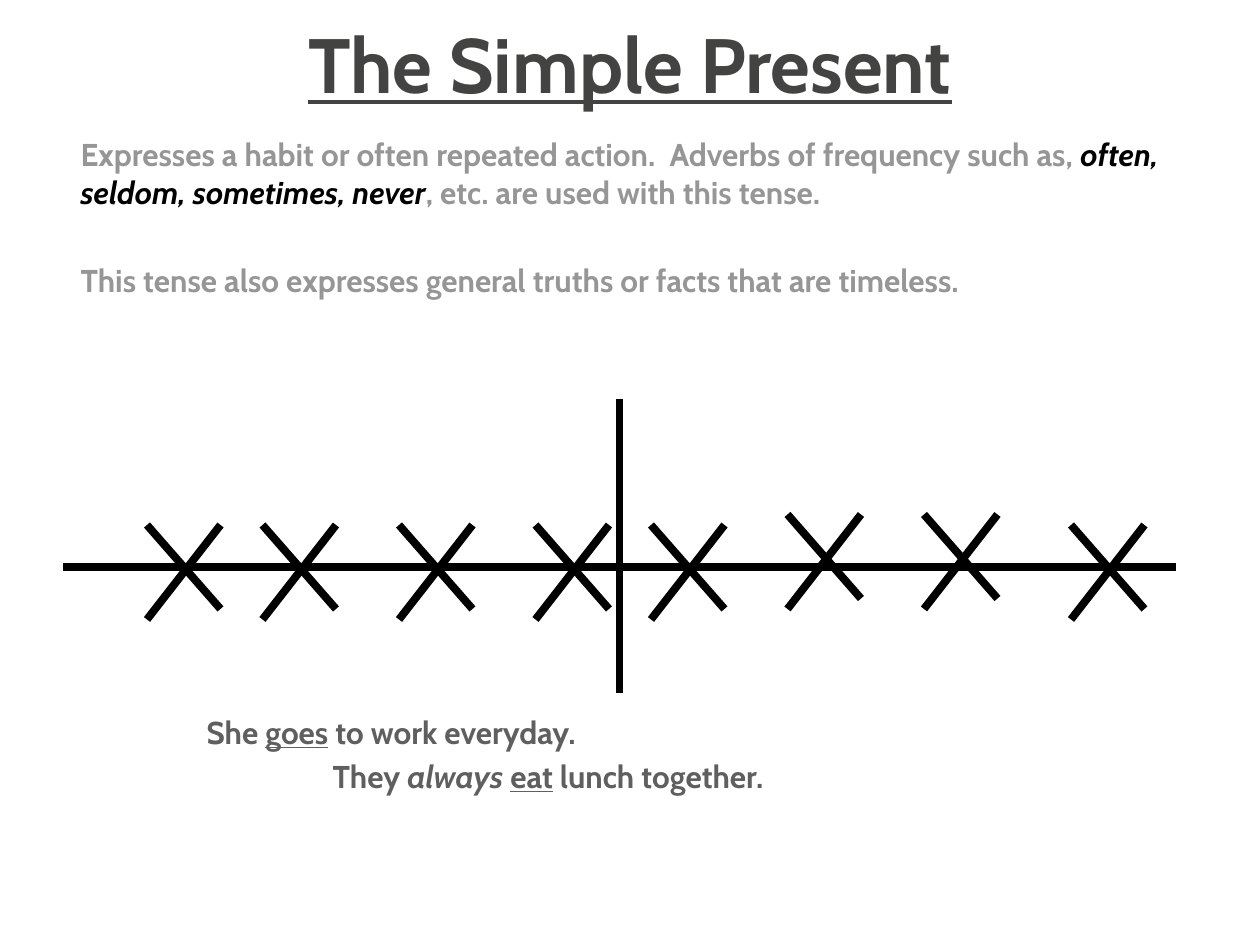
from pptx import Presentation
from pptx import util as u
from pptx.dml.color import RGBColor
from pptx.enum import shapes, text
from lxml import etree

PX = 9525  # EMU in one px, 96 px to the inch
NS = "{http://schemas.openxmlformats.org/drawingml/2006/main}"
FONT = "Cabin"
BLACK, DARK, MID, PALE = "000000", "434342", "5F5F5F", "969696"


def px(n):
    return u.Emu(n * PX)


def color(code):
    return RGBColor.from_string(code)


def frame(slide, box, inset=5):
    """Add a wrapping text box and return its text frame."""
    tf = slide.shapes.add_textbox(*map(px, box)).text_frame
    tf.word_wrap = True
    tf.margin_top = px(inset)
    return tf


def write(para, runs, size, indent=0, gap=0):
    """Fill a paragraph with (words, colour, styles); styles from 'i', 'u'."""
    if indent:
        para._p.get_or_add_pPr().set("marL", str(px(indent)))
    if gap:
        para.space_before = px(gap)
    for words, code, style in runs:
        run = para.add_run()
        run.text = words
        font = run.font
        font.name, font.size, font.bold = FONT, u.Pt(size), True
        font.color.rgb = color(code)
        if "i" in style:
            font.italic = True
        if "u" in style:
            font.underline = True


def title(slide, box):
    tf = frame(slide, box)
    tf.vertical_anchor = text.MSO_ANCHOR.BOTTOM
    para = tf.paragraphs[0]
    para.alignment = text.PP_ALIGN.CENTER
    write(para, [("The Simple Present", DARK, "u")], 44)


def rules(slide, box):
    tf = frame(slide, box, 7)
    write(tf.paragraphs[0], [
        ("Expresses a habit or often repeated action.  "
         "Adverbs of frequency such as, ", PALE, ""),
        ("often, seldom, sometimes, never", BLACK, "i"),
        (", etc. are used with this tense.", PALE, ""),
    ], 18, 36)
    write(tf.add_paragraph(), [
        ("This tense also expresses general truths or facts "
         "that are timeless.", PALE, ""),
    ], 18, 36, 38)


def samples(slide, box):
    tf = frame(slide, box, 7)
    write(tf.paragraphs[0], [
        ("She ", MID, ""), ("goes", MID, "u"),
        (" to work everyday.", MID, ""),
    ], 18, 36)
    write(tf.add_paragraph(), [
        ("They ", MID, ""), ("always ", MID, "i"), ("eat", MID, "u"),
        (" lunch together.", MID, ""),
    ], 18, 132, 5)


def stroke(group, x1, y1, x2, y2):
    line = group.shapes.add_connector(
        shapes.MSO_CONNECTOR.STRAIGHT, *map(px, (x1, y1, x2, y2)))
    line.line.color.rgb = color(BLACK)
    line.line.width = u.Pt(4.5)
    etree.SubElement(line._element.spPr, NS + "effectLst")


def cross(group, x, y):
    stroke(group, x, y, x + 56, y + 64)
    stroke(group, x + 56, y, x, y + 72)


def timeline(slide, box):
    x, y, w, h = box
    group = slide.shapes.add_group_shape()
    # Repeated actions: offsets from the box, two of them set higher
    for dx in (64, 152, 256, 360, 448, 552, 656, 768):
        cross(group, x + dx, y + (88 if dx in (552, 656) else 96))
    # Time axis and the present moment
    stroke(group, x, y + 128, x + w, y + 128)
    stroke(group, x + w // 2, y, x + w // 2, y + h)


def main():
    deck = Presentation()
    deck.slide_width, deck.slide_height = px(960), px(720)
    slide = deck.slides.add_slide(deck.slide_layouts[6])
    title(slide, (16, 8, 928, 80))
    rules(slide, (16, 96, 912, 168))
    samples(slide, (112, 536, 752, 96))
    timeline(slide, (48, 304, 848, 224))
    deck.save("out.pptx")


if __name__ == "__main__":
    main()
